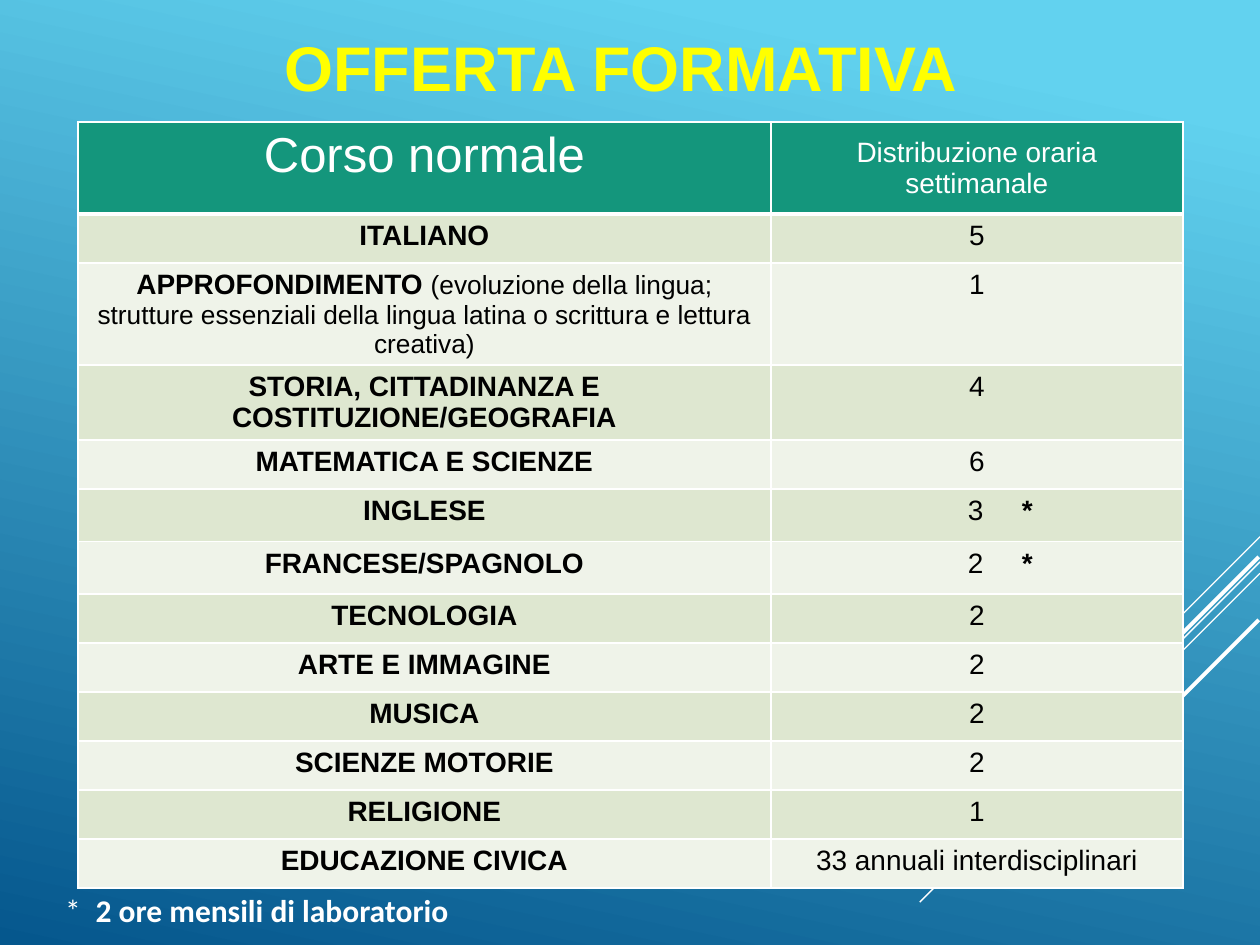
from lxml import etree
from pptx import Presentation
from pptx.dml.color import RGBColor
from pptx.enum import shapes, text
from pptx.oxml import ns
from pptx.util import Pt

WHITE = RGBColor(255, 255, 255)
BLACK = RGBColor(0, 0, 0)
YELLOW = RGBColor(255, 255, 0)
TEAL = RGBColor(0x14, 0x96, 0x7C)
GREEN = RGBColor(0xDE, 0xE7, 0xD0)
PALE = RGBColor(0xEF, 0xF3, 0xE9)
SKY = RGBColor(0x62, 0xD2, 0xEF)
NAVY = RGBColor(0x05, 0x57, 0x8D)

TITLE = "OFFERTA FORMATIVA"
NOTE = "2 ore mensili di laboratorio"
HEADER = ("Corso normale", "Distribuzione oraria settimanale")
DETAIL = ("(evoluzione della lingua; strutture essenziali della lingua latina "
          "o scrittura e lettura creativa)")
LAB_STOPS = (105.4, 136.2)
COURSES = [
    ("ITALIANO", "", "5", False, 28),
    ("APPROFONDIMENTO ", DETAIL, "1", False, 58.3),
    ("STORIA, CITTADINANZA E COSTITUZIONE/GEOGRAFIA", "", "4", False, 42.9),
    ("MATEMATICA E SCIENZE", "", "6", False, 28),
    ("INGLESE", "", "3", True, 30),
    ("FRANCESE/SPAGNOLO", "", "2", True, 30),
    ("TECNOLOGIA", "", "2", False, 28),
    ("ARTE E IMMAGINE", "", "2", False, 28),
    ("MUSICA", "", "2", False, 28),
    ("SCIENZE MOTORIE", "", "2", False, 28),
    ("RELIGIONE", "", "1", False, 28),
    ("EDUCAZIONE CIVICA", "", "33 annuali interdisciplinari", False, 28),
]
HEADER_HEIGHT = 52.6
COLUMNS = (396, 235.4)
STRIPES = [
    (720, 306.7, 59.8, 0.75),
    (720, 321.1, 194.4, 0.75),
    (720, 327.6, 123.8, 0.75),
    (719.3, 318.2, 113, 2.25),
    (719.3, 354.2, 82.1, 2.25),
]


def add_text(p, content, size=16, color=BLACK, bold=False, font="Arial",
             align=text.PP_ALIGN.CENTER):
    p.alignment = align
    r = p.add_run()
    r.text = content
    r.font.size = Pt(size)
    r.font.name = font
    r.font.bold = bold
    r.font.color.rgb = color


def set_tabs(p, stops):
    tabs = etree.SubElement(p._p.get_or_add_pPr(), ns.qn("a:tabLst"))
    for stop in stops:
        etree.SubElement(tabs, ns.qn("a:tab"), pos=str(Pt(stop)), algn="l")


def add_box(s, left, top, width, height):
    tf = s.shapes.add_textbox(Pt(left), Pt(top), Pt(width), Pt(height)).text_frame
    tf.word_wrap = True
    return tf.paragraphs[0]


def style_cell(cell, fill, top=1, bottom=1):
    cell.fill.solid()
    cell.fill.fore_color.rgb = fill
    tcPr = cell._tc.get_or_add_tcPr()
    for i, (side, width) in enumerate(zip("LRTB", (1, 1, top, bottom))):
        ln = etree.Element(ns.qn(f"a:ln{side}"), w=str(Pt(width)))
        solid = etree.SubElement(ln, ns.qn("a:solidFill"))
        etree.SubElement(solid, ns.qn("a:srgbClr"), val=str(WHITE))
        tcPr.insert(i, ln)


def add_background(s):
    fill = s.background.fill
    fill.gradient()
    fill.gradient_angle = 258
    for stop, color, position in zip(fill.gradient_stops, (SKY, NAVY), (0.1, 1)):
        stop.color.rgb = color
        stop.position = position
    for x, y, run, width in STRIPES:
        line = s.shapes.add_connector(shapes.MSO_CONNECTOR.STRAIGHT,
                                      Pt(x), Pt(y), Pt(x - run), Pt(y + run))
        line.line.color.rgb = WHITE
        line.line.width = Pt(width)
        etree.SubElement(line._element.spPr, ns.qn("a:effectLst"))


def add_courses(s):
    heights = [HEADER_HEIGHT] + [course[-1] for course in COURSES]
    table = s.shapes.add_table(len(heights), len(COLUMNS), Pt(44.5), Pt(69.7),
                               Pt(sum(COLUMNS)), Pt(sum(heights))).table
    for column, width in zip(table.columns, COLUMNS):
        column.width = Pt(width)
    for row, height in zip(table.rows, heights):
        row.height = Pt(height)

    for i, (label, size) in enumerate(zip(HEADER, (28, 16))):
        cell = table.cell(0, i)
        style_cell(cell, TEAL, bottom=3)
        add_text(cell.text_frame.paragraphs[0], label, size=size, color=WHITE)
    table.cell(0, 1).vertical_anchor = text.MSO_ANCHOR.MIDDLE

    for i, (subject, detail, hours, lab, _) in enumerate(COURSES, 1):
        cells = table.cell(i, 0), table.cell(i, 1)
        for cell in cells:
            style_cell(cell, GREEN if i % 2 else PALE, top=3 if i == 1 else 1)
        name, amount = (cell.text_frame.paragraphs[0] for cell in cells)
        add_text(name, subject, bold=True)
        if detail:
            add_text(name, detail, size=15)
        if lab:
            set_tabs(amount, LAB_STOPS)
            add_text(amount, f"\t{hours}\t", align=text.PP_ALIGN.LEFT)
            add_text(amount, "*", bold=True, align=text.PP_ALIGN.LEFT)
        else:
            add_text(amount, hours)


def main():
    prs = Presentation()
    prs.slide_width, prs.slide_height = Pt(720), Pt(540)
    s = prs.slides.add_slide(prs.slide_layouts[6])
    add_background(s)
    add_courses(s)
    p = add_box(s, 30.2, 505.4, 326.2, 28.8)
    set_tabs(p, (17.4,))
    note = dict(size=18, color=WHITE, font="Calibri", align=text.PP_ALIGN.LEFT)
    add_text(p, "*\t", **note)
    add_text(p, NOTE, bold=True, **note)
    add_text(add_box(s, 118.4, 13, 473, 51.1), TITLE, size=36, color=YELLOW, bold=True)
    prs.save("out.pptx")


if __name__ == "__main__":
    main()
